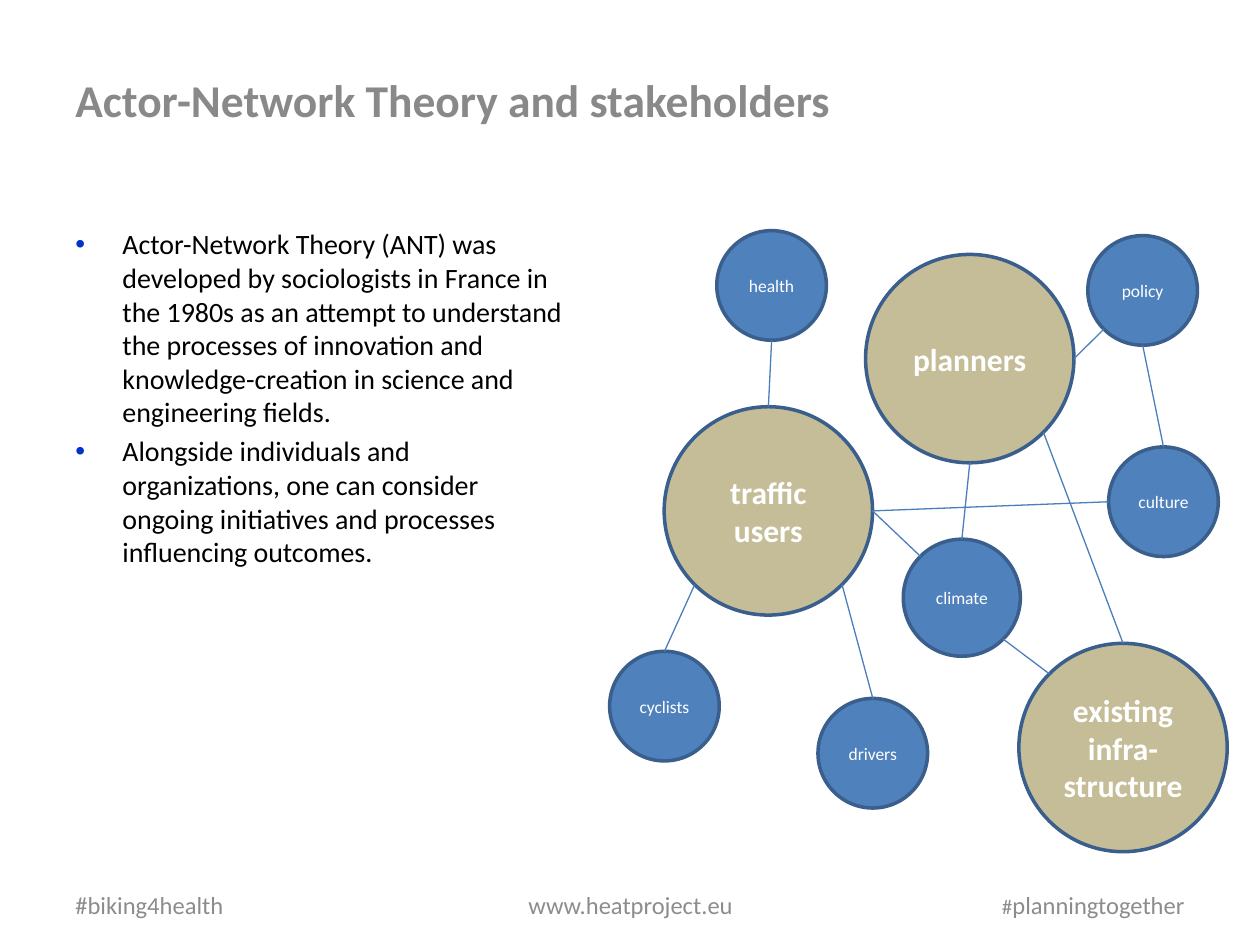
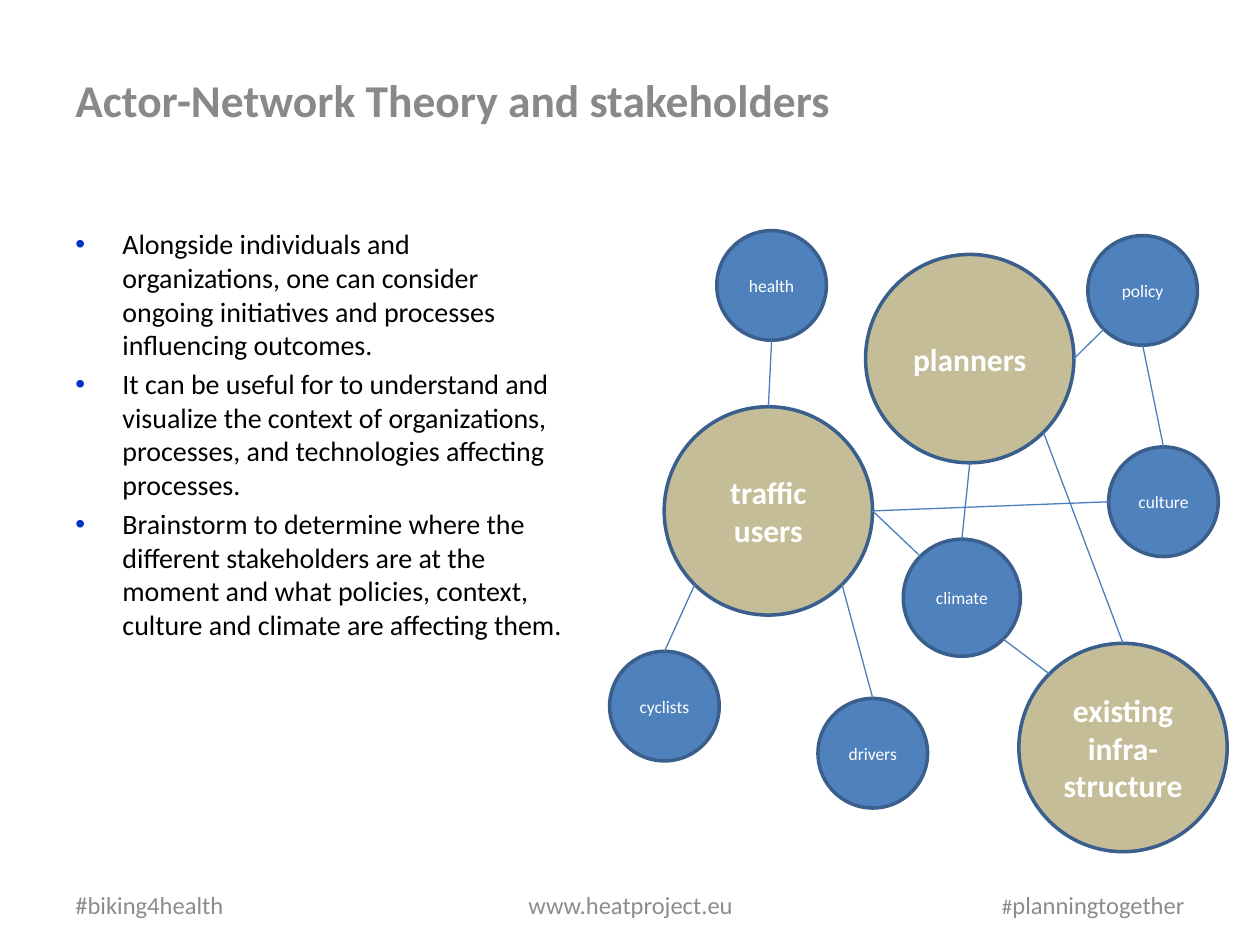
import dataclasses
import enum
import math

import lxml.etree
import pptx
import pptx.dml.color
import pptx.enum.shapes
import pptx.enum.text
import pptx.oxml.ns
import pptx.util

Cm = pptx.util.Cm
Pt = pptx.util.Pt
RGBColor = pptx.dml.color.RGBColor
Align = pptx.enum.text.PP_ALIGN
Anchor = pptx.enum.text.MSO_ANCHOR
qn = pptx.oxml.ns.qn

# Colours and font
BLACK = RGBColor(0x00, 0x00, 0x00)
WHITE = RGBColor(0xFF, 0xFF, 0xFF)
TITLE = RGBColor(0x89, 0x89, 0x89)
FOOT = RGBColor(0x8C, 0x8C, 0x8C)
DOT = RGBColor(0x00, 0x33, 0xCC)
BLUE = RGBColor(0x4F, 0x81, 0xBD)
SAND = RGBColor(0xC4, 0xBD, 0x97)
EDGE = RGBColor(0x3A, 0x5F, 0x8C)
LINK = RGBColor(0x4B, 0x7E, 0xBC)
FONT = "Calibri"

LEFT = 1.27
FOOT_TOP, FOOT_HIGH = 17.73, 1.02
INDENT = Cm(0.95)


@dataclasses.dataclass(frozen=True)
class Style:
    size: float
    color: RGBColor
    bold: bool = False


@dataclasses.dataclass(frozen=True)
class Run:
    text: str
    style: Style


@dataclasses.dataclass(frozen=True)
class Label:
    left: float
    top: float
    width: float
    height: float
    runs: tuple[Run, ...]
    align: Align = Align.LEFT
    anchor: Anchor = Anchor.MIDDLE


@dataclasses.dataclass(frozen=True)
class Kind:
    fill: RGBColor
    style: Style


@dataclasses.dataclass(frozen=True)
class Actor:
    text: str
    left: float
    top: float
    size: float
    kind: Kind


class Side(enum.Enum):
    """Compass points on a circle, in degrees clockwise from the right."""
    E = 0
    SE = 45
    S = 90
    SW = 135
    W = 180
    NW = 225
    N = 270


@dataclasses.dataclass(frozen=True)
class Link:
    start: str
    out: Side
    end: str
    into: Side


# Shared title and footers
HASH = Style(14, FOOT)
LABELS = (
    Label(LEFT, 17.73, 5.92, FOOT_HIGH, (Run("#biking4health", HASH),)),
    Label(8.69, FOOT_TOP, 8.05, FOOT_HIGH, (Run("www.heatproject.eu", HASH),), Align.CENTER),
    Label(18.21, FOOT_TOP, 5.92, FOOT_HIGH,
          (Run("#", Style(12, FOOT)), Run("planningtogether", HASH)), Align.RIGHT),
    Label(LEFT, 1.32, 15.82, 1.37,
          (Run("Actor-Network Theory and stakeholders", Style(26, TITLE, True)),),
          anchor=Anchor.TOP),
)
BODY = Style(16, BLACK)

# Actors in the network and the links between them
GROUP = Kind(SAND, Style(18, WHITE, True))
FACTOR = Kind(BLUE, Style(10, WHITE))
BIG, SMALL = 4.2, 2.21
ACTORS = {
    "health": Actor("health", 14.45, 4.65, SMALL, FACTOR),
    "culture": Actor("culture", 22.35, 9.01, SMALL, FACTOR),
    "drivers": Actor("drivers", 16.49, 14.08, SMALL, FACTOR),
    "users": Actor("traffic users", 13.39, 8.2, BIG, GROUP),
    "planners": Actor("planners", 17.45, 5.13, BIG, GROUP),
    "infra": Actor("existing infra-structure", 20.54, 12.97, BIG, GROUP),
    "climate": Actor("climate", 18.21, 10.87, 2.36, FACTOR),
    "cyclists": Actor("cyclists", 12.29, 13.13, SMALL, FACTOR),
    "policy": Actor("policy", 21.93, 4.75, SMALL, FACTOR),
}
LINKS = (
    Link("health", Side.S, "users", Side.N),
    Link("users", Side.SW, "cyclists", Side.N),
    Link("drivers", Side.N, "users", Side.SE),
    Link("infra", Side.NW, "climate", Side.SE),
    Link("users", Side.E, "climate", Side.NW),
    Link("policy", Side.SW, "planners", Side.E),
    Link("planners", Side.SE, "infra", Side.N),
    Link("culture", Side.N, "policy", Side.S),
    Link("culture", Side.W, "users", Side.E),
    Link("planners", Side.S, "climate", Side.N),
)

# Bullet points of each slide
CONTEXT = ("Alongside individuals and organizations, one can consider ongoing "
           "initiatives and processes influencing outcomes.")
PAGES = (
    ("Actor-Network Theory (ANT) was developed by sociologists in France in the 1980s "
     "as an attempt to understand the processes of innovation and knowledge-creation "
     "in science and engineering fields.",
     CONTEXT),
    (CONTEXT,
     "It can be useful for to understand and visualize the context of organizations, "
     "processes, and technologies affecting processes.",
     "Brainstorm to determine where the different stakeholders are at the moment and "
     "what policies, context, culture and climate are affecting them."),
)


def add_run(para, run: Run) -> None:
    part = para.add_run()
    part.text = run.text
    part.font.name = FONT
    part.font.size = Pt(run.style.size)
    part.font.bold = run.style.bold
    part.font.color.rgb = run.style.color


def add_box(slide, left: float, top: float, width: float, height: float):
    box = slide.shapes.add_textbox(Cm(left), Cm(top), Cm(width), Cm(height))
    box.text_frame.word_wrap = True
    return box.text_frame


def add_label(slide, label: Label) -> None:
    frame = add_box(slide, label.left, label.top, label.width, label.height)
    frame.vertical_anchor = label.anchor
    para = frame.paragraphs[0]
    para.alignment = label.align
    for run in label.runs:
        add_run(para, run)


def set_bullet(para) -> None:
    props = para._p.get_or_add_pPr()
    props.set("marL", str(INDENT))
    props.set("indent", str(-INDENT))
    color = lxml.etree.SubElement(props, qn("a:buClr"))
    lxml.etree.SubElement(color, qn("a:srgbClr"), val=str(DOT))
    lxml.etree.SubElement(props, qn("a:buFont"), typeface="Arial")
    lxml.etree.SubElement(props, qn("a:buChar"), char="•")


def add_points(slide, points: tuple[str, ...]) -> None:
    frame = add_box(slide, LEFT, 4.45, 10.44, 12.57)
    for index, point in enumerate(points):
        para = frame.add_paragraph() if index else frame.paragraphs[0]
        set_bullet(para)
        if index:
            para.space_before = Pt(3.2)
        add_run(para, Run(point, BODY))


def add_actor(slide, actor: Actor) -> None:
    shape = slide.shapes.add_shape(
        pptx.enum.shapes.MSO_SHAPE.FLOWCHART_CONNECTOR,
        Cm(actor.left), Cm(actor.top), Cm(actor.size), Cm(actor.size))
    shape.shadow.inherit = False
    shape.fill.solid()
    shape.fill.fore_color.rgb = actor.kind.fill
    shape.line.color.rgb = EDGE
    shape.line.width = Pt(2)
    frame = shape.text_frame
    frame.word_wrap = True
    frame.vertical_anchor = Anchor.MIDDLE
    para = frame.paragraphs[0]
    para.alignment = Align.CENTER
    add_run(para, Run(actor.text, actor.kind.style))


def rim(actor: Actor, side: Side) -> tuple[int, int]:
    """Return the point where a side of the circle lies."""
    angle, half = math.radians(side.value), actor.size / 2
    return (Cm(actor.left + half + half * math.cos(angle)),
            Cm(actor.top + half + half * math.sin(angle)))


def add_link(slide, link: Link) -> None:
    line = slide.shapes.add_connector(
        pptx.enum.shapes.MSO_CONNECTOR.STRAIGHT,
        *rim(ACTORS[link.start], link.out), *rim(ACTORS[link.end], link.into))
    line.line.color.rgb = LINK
    line.line.width = Pt(0.75)
    lxml.etree.SubElement(line._element.spPr, qn("a:effectLst"))


def add_page(deck, points: tuple[str, ...]) -> None:
    slide = deck.slides.add_slide(deck.slide_layouts[6])
    add_points(slide, points)
    for label in LABELS:
        add_label(slide, label)
    for actor in ACTORS.values():
        add_actor(slide, actor)
    for link in LINKS:
        add_link(slide, link)


def main() -> None:
    deck = pptx.Presentation()
    deck.slide_width, deck.slide_height = Cm(25.4), Cm(19.05)
    for points in PAGES:
        add_page(deck, points)
    deck.save("out.pptx")


if __name__ == "__main__":
    main()
